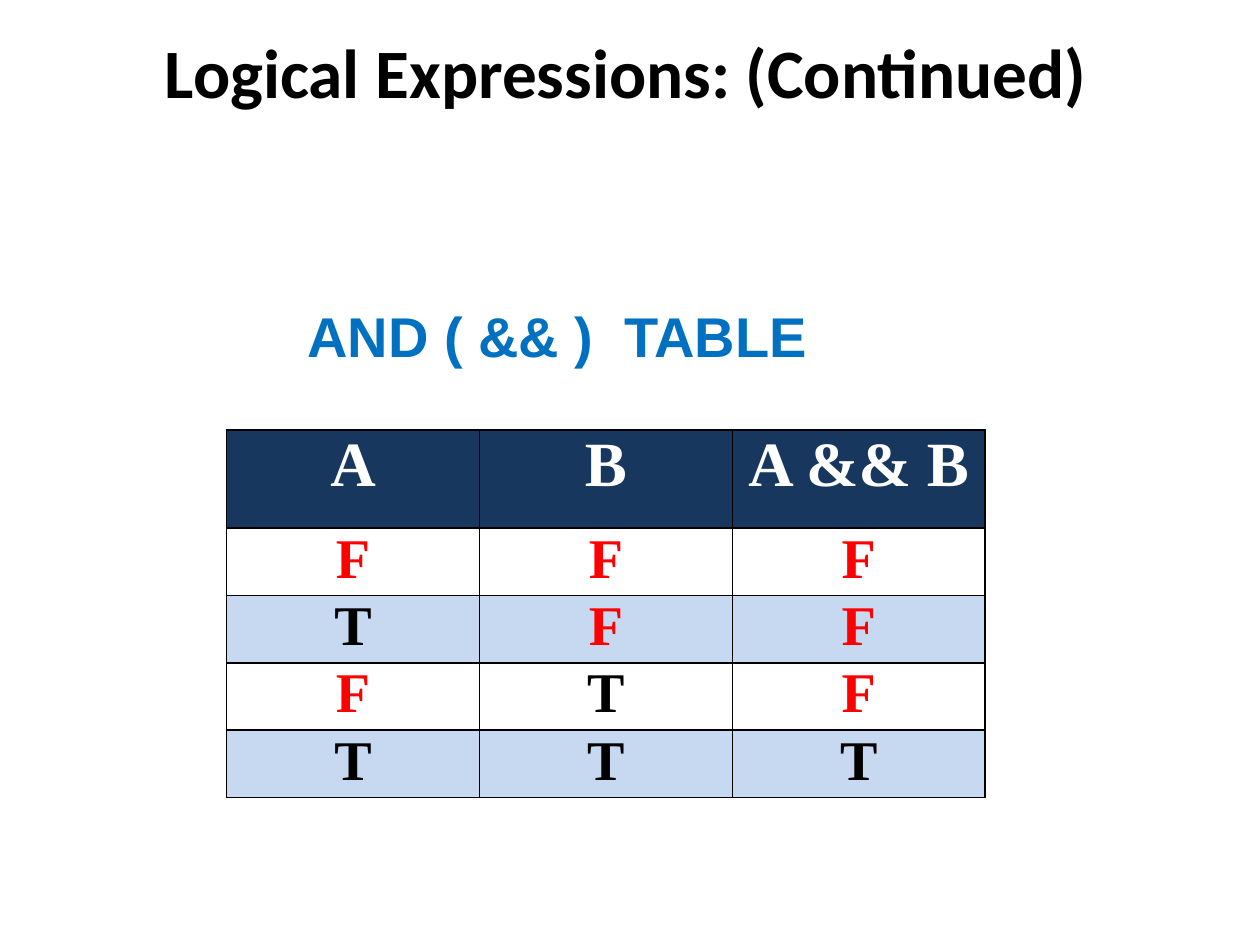
from lxml import etree
from pptx import Presentation
from pptx import util as u
from pptx.dml.color import RGBColor
from pptx.enum import text
from pptx.oxml.ns import qn

TITLE = "Logical Expressions: (Continued)"
SUBTITLE = "AND ( && )  TABLE"
TRUTH_TABLE = [
    ("A", "B", "A && B"),
    ("F", "F", "F"),
    ("T", "F", "F"),
    ("F", "T", "F"),
    ("T", "T", "T"),
]
COLOURS = {
    "black": "000000", "white": "FFFFFF", "red": "FF0000",
    "blue": "0070C0", "navy": "17375E", "pale": "C6D9F1",
}
VALUE_COLOURS = {"T": "black", "F": "red"}
TITLE_BOX = (33.75, 16.5, 648, 90)
SUBTITLE_BOX = (168.5, 168.5, 309.5, 46)
TABLE_LEFT, TABLE_TOP = 129.5, 245.75
COLUMN_WIDTH, HEADER_HEIGHT, ROW_HEIGHT = 144.5, 56, 38.5


def rgb(name):
    return RGBColor.from_string(COLOURS[name])


def set_values(target, values):
    for name, value in values.items():
        setattr(target, name, value)


def write(frame, content, font, size, colour, align):
    frame.text = content
    paragraph = frame.paragraphs[0]
    paragraph.alignment = align
    run_font = paragraph.runs[0].font
    set_values(run_font, {"name": font, "size": u.Pt(size), "bold": True})
    run_font.color.rgb = rgb(colour)


def add_borders(cell):
    """Draw a thin black line on all four sides; lines go before the fill."""
    properties = cell._tc.get_or_add_tcPr()
    for index, side in enumerate(("lnL", "lnR", "lnT", "lnB")):
        line = etree.Element(qn("a:" + side), w=str(u.Pt(1)))
        fill = etree.SubElement(line, qn("a:solidFill"))
        etree.SubElement(fill, qn("a:srgbClr"), val=COLOURS["black"])
        properties.insert(index, line)


def format_cell(cell, content, row):
    header = row == 0
    colour = "white" if header else VALUE_COLOURS[content]
    fill = "navy" if header else "white" if row % 2 else "pale"
    set_values(cell, {"margin_left": u.Pt(5), "margin_right": u.Pt(5),
                      "margin_top": 0, "margin_bottom": 0})
    write(cell.text_frame, content, "Times New Roman",
          36 if header else 32, colour, text.PP_ALIGN.CENTER)
    cell.fill.solid()
    cell.fill.fore_color.rgb = rgb(fill)
    add_borders(cell)


def add_truth_table(slide):
    row_count, column_count = len(TRUTH_TABLE), len(TRUTH_TABLE[0])
    heights = [HEADER_HEIGHT] + [ROW_HEIGHT] * (row_count - 1)
    table = slide.shapes.add_table(
        row_count, column_count, u.Pt(TABLE_LEFT), u.Pt(TABLE_TOP),
        u.Pt(COLUMN_WIDTH * column_count), u.Pt(sum(heights))).table
    for column in table.columns:
        column.width = u.Pt(COLUMN_WIDTH)
    for row, (values, height) in enumerate(zip(TRUTH_TABLE, heights)):
        table.rows[row].height = u.Pt(height)
        for column, content in enumerate(values):
            format_cell(table.cell(row, column), content, row)


def main():
    presentation = Presentation()
    set_values(presentation, {"slide_width": u.Pt(720), "slide_height": u.Pt(540)})
    slide = presentation.slides.add_slide(presentation.slide_layouts[5])

    title = slide.shapes.title
    set_values(title, dict(zip(("left", "top", "width", "height"), map(u.Pt, TITLE_BOX))))
    set_values(title.text_frame, {
        "vertical_anchor": text.MSO_ANCHOR.TOP, "margin_top": 0,
        "auto_size": text.MSO_AUTO_SIZE.NONE})
    write(title.text_frame, TITLE, "Calibri", 39.6, "black", text.PP_ALIGN.CENTER)

    add_truth_table(slide)

    subtitle = slide.shapes.add_textbox(*map(u.Pt, SUBTITLE_BOX))
    set_values(subtitle.text_frame, {
        "word_wrap": True, "vertical_anchor": text.MSO_ANCHOR.MIDDLE,
        "auto_size": text.MSO_AUTO_SIZE.SHAPE_TO_FIT_TEXT})
    write(subtitle.text_frame, SUBTITLE, "Arial", 32, "blue", text.PP_ALIGN.LEFT)

    presentation.save("out.pptx")


if __name__ == "__main__":
    main()
